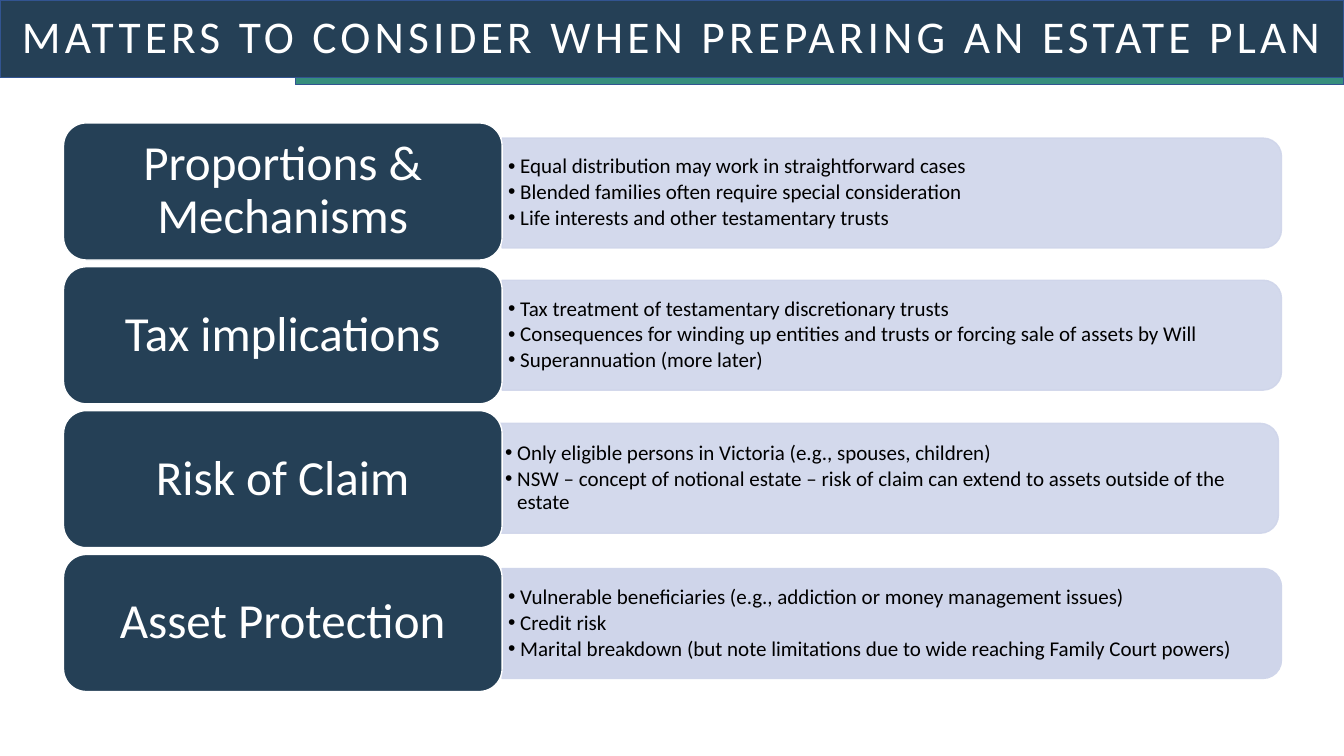
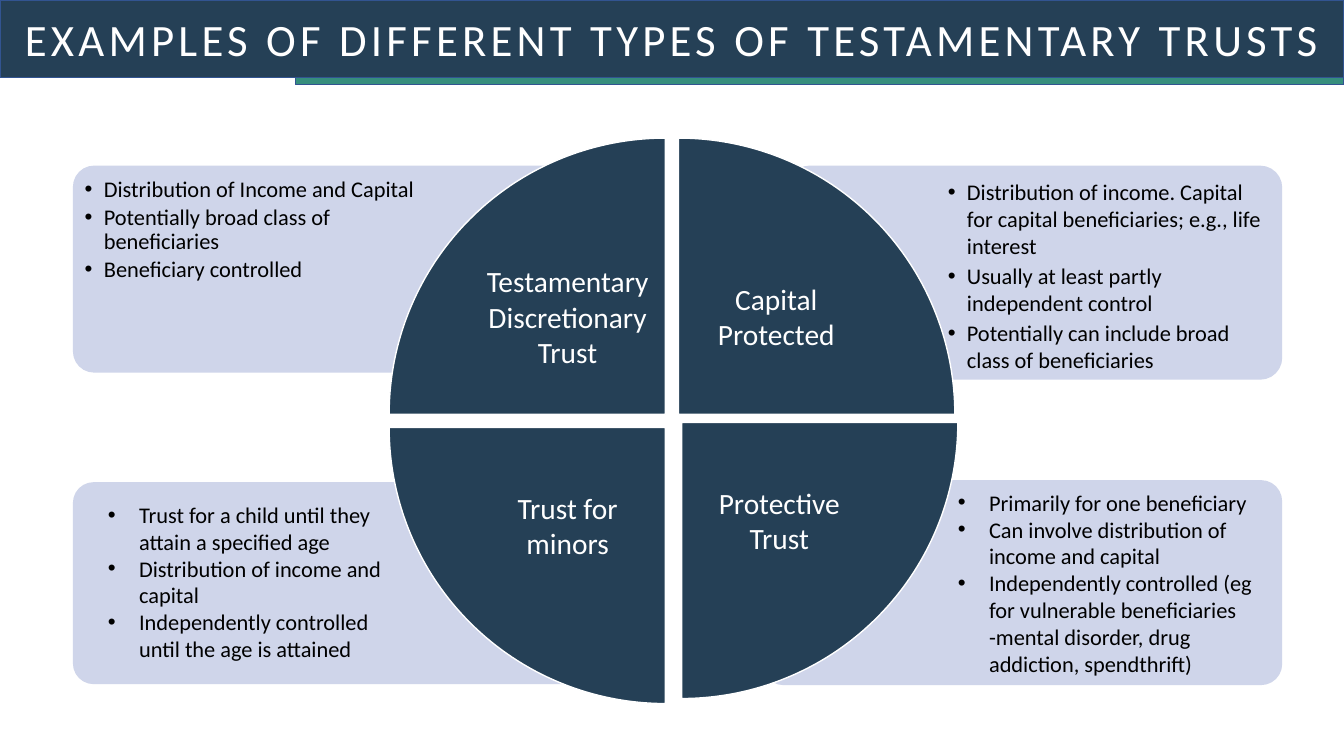
from dataclasses import dataclass

from lxml import etree
from pptx import Presentation
from pptx.dml.color import RGBColor
from pptx.enum.shapes import MSO_SHAPE
from pptx.enum.text import MSO_ANCHOR, MSO_AUTO_SIZE, PP_ALIGN
from pptx.oxml.ns import qn
from pptx.util import Inches, Pt

RECT = MSO_SHAPE.RECTANGLE
ROUNDED = MSO_SHAPE.ROUNDED_RECTANGLE
ROUNDED_END = MSO_SHAPE.ROUND_2_SAME_RECTANGLE
WEDGE = MSO_SHAPE.PIE_WEDGE
CENTER, LEFT = PP_ALIGN.CENTER, PP_ALIGN.LEFT
MIDDLE, TOP = MSO_ANCHOR.MIDDLE, MSO_ANCHOR.TOP
NO_FIT = MSO_AUTO_SIZE.NONE

SLIDE_W, SLIDE_H = 13.33, 7.5
BAND_H = 0.77
FOUR_LISTS_LAYOUT = 4


@dataclass(frozen=True)
class Theme:
    font: str = "Calibri"
    navy: RGBColor = RGBColor(0x25, 0x40, 0x56)
    edge: RGBColor = RGBColor(0x32, 0x54, 0x91)
    green: RGBColor = RGBColor(0x36, 0x8E, 0x7D)
    pale: RGBColor = RGBColor(0xCF, 0xD5, 0xEA)
    white: RGBColor = RGBColor(0xFF, 0xFF, 0xFF)
    black: RGBColor = RGBColor(0, 0, 0)
    topic: float = 35
    topic_list: float = 15
    trust: float = 21
    trust_list: float = 16


THEME = Theme()


@dataclass(frozen=True)
class Box:
    x: float
    y: float
    w: float
    h: float

    def lengths(self) -> tuple:
        return tuple(Inches(v) for v in (self.x, self.y, self.w, self.h))


@dataclass(frozen=True)
class ListStyle:
    size: float
    indent: float
    inset: tuple[float, float]
    spacing: float = 1.0
    after: float = 0
    anchor: MSO_ANCHOR = TOP


@dataclass(frozen=True)
class Topic:
    label: str
    items: tuple[str, ...]
    panel_x: float
    panel_y: float
    opacity: int = 90


@dataclass(frozen=True)
class Trust:
    label: str
    items: tuple[str, ...]
    panel: Box
    list_box: Box
    style: ListStyle
    wedge_x: float
    wedge_y: float
    rotation: int


TOPIC_STYLE = ListStyle(THEME.topic_list, 0.12, (0.06, 0.03), 0.9, 2.25, MIDDLE)
TOPICS = (
    Topic("Proportions & Mechanisms",
          ("Equal distribution may work in straightforward cases",
           "Blended families often require special consideration",
           "Life interests and other testamentary trusts"), 4.98, 1.37),
    Topic("Tax implications",
          ("Tax treatment of testamentary discretionary trusts",
           "Consequences for winding up entities and trusts or forcing sale of assets by Will",
           "Superannuation (more later)"), 4.98, 2.78),
    Topic("Risk of Claim",
          ("Only eligible persons in Victoria (e.g., spouses, children)",
           "NSW – concept of notional estate – risk of claim can extend to assets outside of the estate"),
          4.95, 4.2),
    Topic("Asset Protection",
          ("Vulnerable beneficiaries (e.g., addiction or money management issues)",
           "Credit risk",
           "Marital breakdown (but note limitations due to wide reaching Family Court powers)"),
          4.98, 5.64, 100),
)

TRUSTS = (
    Trust("Testamentary Discretionary Trust",
          ("Distribution of Income and Capital",
           "Potentially broad class of beneficiaries",
           "Beneficiary controlled"),
          Box(0.73, 1.65, 5.09, 2.04), Box(0.77, 1.7, 3.47, 1.44),
          ListStyle(THEME.trust_list, 0.19, (0.07, 0.07), 0.9, 2.4), 3.86, 1.37, 0),
    Trust("Capital Protected",
          ("Distribution of income. Capital for capital beneficiaries; e.g., life interest",
           "Usually at least partly independent control",
           "Potentially can include broad class of beneficiaries"),
          Box(7.82, 1.65, 4.89, 2.11), Box(9.33, 1.7, 3.33, 1.49),
          ListStyle(THEME.trust_list, 0.19, (0.07, 0.07), 1.0, 2.4), 6.73, 1.37, 90),
    Trust("Protective Trust",
          ("Primarily for one beneficiary",
           "Can involve distribution of income and capital",
           "Independently controlled (eg for vulnerable beneficiaries -mental disorder, drug addiction, spendthrift)"),
          Box(7.57, 4.77, 5.14, 2.02), Box(9.42, 4.77, 3.17, 1.85),
          ListStyle(THEME.trust_list, 0.31, (0.08, 0.08)), 6.76, 4.19, 180),
    Trust("Trust for minors",
          ("Trust for a child until they attain a specified age",
           "Distribution of income and capital",
           "Independently controlled until the age is attained"),
          Box(0.73, 4.79, 5.21, 1.99), Box(0.97, 4.92, 3, 1.72),
          ListStyle(THEME.trust_list, 0.31, (0.1, 0.05)), 3.86, 4.24, 270),
)


def place(sp, box: Box) -> None:
    sp.left, sp.top, sp.width, sp.height = box.lengths()


def paint(sp, fill: RGBColor, line: RGBColor) -> None:
    sp.fill.solid()
    sp.fill.fore_color.rgb = fill
    sp.line.color.rgb = line
    sp.line.width = Pt(1)


def add_shape(slide, kind: MSO_SHAPE, box: Box, fill: RGBColor, line: RGBColor):
    sp = slide.shapes.add_shape(kind, *box.lengths())
    sp.shadow.inherit = False
    paint(sp, fill, line)
    return sp


def set_opacity(sp, percent: int) -> None:
    """Apply one opacity to the fill and the outline."""
    for color in sp._element.spPr.iter(qn("a:srgbClr")):
        etree.SubElement(color, qn("a:alpha"), val=str(percent * 1000))


def set_frame(tf, inset: tuple[float, float], anchor: MSO_ANCHOR) -> None:
    tf.word_wrap = True
    tf.auto_size = NO_FIT
    tf.vertical_anchor = anchor
    tf.margin_left = tf.margin_right = Inches(inset[0])
    tf.margin_top = tf.margin_bottom = Inches(inset[1])


def add_run(p, text: str, size: float, color: RGBColor):
    r = p.add_run()
    r.text = text
    r.font.name = THEME.font
    r.font.size = Pt(size)
    r.font.bold = False
    r.font.color.rgb = color
    return r


def write_label(sp, text: str, size: float, inset: tuple[float, float],
                spacing: float = 1.0):
    """Write one centred white paragraph and return its run."""
    set_frame(sp.text_frame, inset, MIDDLE)
    p = sp.text_frame.paragraphs[0]
    p.alignment = CENTER
    p.line_spacing = spacing
    return add_run(p, text, size, THEME.white)


def fill_list(slide, sp, box: Box, items: tuple[str, ...], style: ListStyle) -> None:
    """Fill a body placeholder with bullets and bring it to the front."""
    place(sp, box)
    slide.shapes._spTree.append(sp._element)
    tf = sp.text_frame
    set_frame(tf, style.inset, style.anchor)
    for i, item in enumerate(items):
        p = tf.add_paragraph() if i else tf.paragraphs[0]
        p.alignment = LEFT
        p.line_spacing = style.spacing
        p.space_before = Pt(0)
        p.space_after = Pt(style.after)
        pPr = p._p.get_or_add_pPr()
        pPr.set("marL", str(Inches(style.indent)))
        pPr.set("indent", str(-Inches(style.indent)))
        etree.SubElement(pPr, qn("a:buFont"), typeface="Arial")
        etree.SubElement(pPr, qn("a:buChar"), char="•")
        add_run(p, item, style.size, THEME.black)


def new_slide(prs, title: str, size: float, spacing: float):
    """Add a slide with its title band and return it with its list placeholders."""
    slide = prs.slides.add_slide(prs.slide_layouts[FOUR_LISTS_LAYOUT])
    sp = slide.shapes.title
    place(sp, Box(0, 0, SLIDE_W, BAND_H))
    paint(sp, THEME.navy, THEME.edge)
    r = write_label(sp, title, size, (0.1, 0.05), spacing)
    r.font._element.set("spc", "300")
    add_shape(slide, RECT, Box(2.93, BAND_H, 10.4, 0.07), THEME.green, THEME.edge)
    lists = [ph for ph in slide.placeholders if ph.placeholder_format.idx != 0]
    return slide, lists


def build_topics(prs) -> None:
    slide, lists = new_slide(
        prs, "MATTERS TO CONSIDER WHEN PREPARING AN ESTATE PLAN", 32.4, 0.9)
    panel_w, panel_h, list_h = 7.73, 1.09, 0.98
    for i, (topic, ph) in enumerate(zip(TOPICS, lists)):
        # The panel is drawn upright and turned, so its rounded end faces right.
        turn = (panel_w - panel_h) / 2
        panel = add_shape(slide, ROUNDED_END,
                          Box(topic.panel_x + turn, topic.panel_y - turn, panel_h, panel_w),
                          THEME.pale, THEME.pale)
        panel.rotation = 90
        set_opacity(panel, topic.opacity)
        list_y = topic.panel_y + (panel_h - list_h) / 2
        fill_list(slide, ph, Box(topic.panel_x, list_y, 7.68, list_h),
                  topic.items, TOPIC_STYLE)
        label = add_shape(slide, ROUNDED, Box(0.63, 1.22 + 1.427 * i, 4.35, 1.36),
                          THEME.navy, THEME.white)
        write_label(label, topic.label, THEME.topic, (0.21, 0.13), 0.9)


def build_trusts(prs) -> None:
    slide, lists = new_slide(
        prs, "EXAMPLES OF DIFFERENT TYPES OF TESTAMENTARY TRUSTS", 32, 1.0)
    radius, label_size = 2.74, 1.94
    for trust, ph in zip(TRUSTS, lists):
        panel = add_shape(slide, ROUNDED, trust.panel, THEME.pale, THEME.pale)
        panel.adjustments[0] = 0.1
        fill_list(slide, ph, trust.list_box, trust.items, trust.style)
    for trust in TRUSTS:
        wedge = add_shape(slide, WEDGE, Box(trust.wedge_x, trust.wedge_y, radius, radius),
                          THEME.navy, THEME.white)
        wedge.rotation = trust.rotation
        # Each label sits in the corner of its wedge nearest the hub.
        dx = radius - label_size if trust.rotation in (0, 270) else 0
        dy = radius - label_size if trust.rotation in (0, 90) else 0
        box = Box(trust.wedge_x + dx, trust.wedge_y + dy, label_size, label_size)
        label = slide.shapes.add_textbox(*box.lengths())
        write_label(label, trust.label, THEME.trust, (0.16, 0.16))


def main() -> None:
    prs = Presentation()
    prs.slide_width, prs.slide_height = Inches(SLIDE_W), Inches(SLIDE_H)
    build_topics(prs)
    build_trusts(prs)
    prs.save("out.pptx")


if __name__ == "__main__":
    main()
